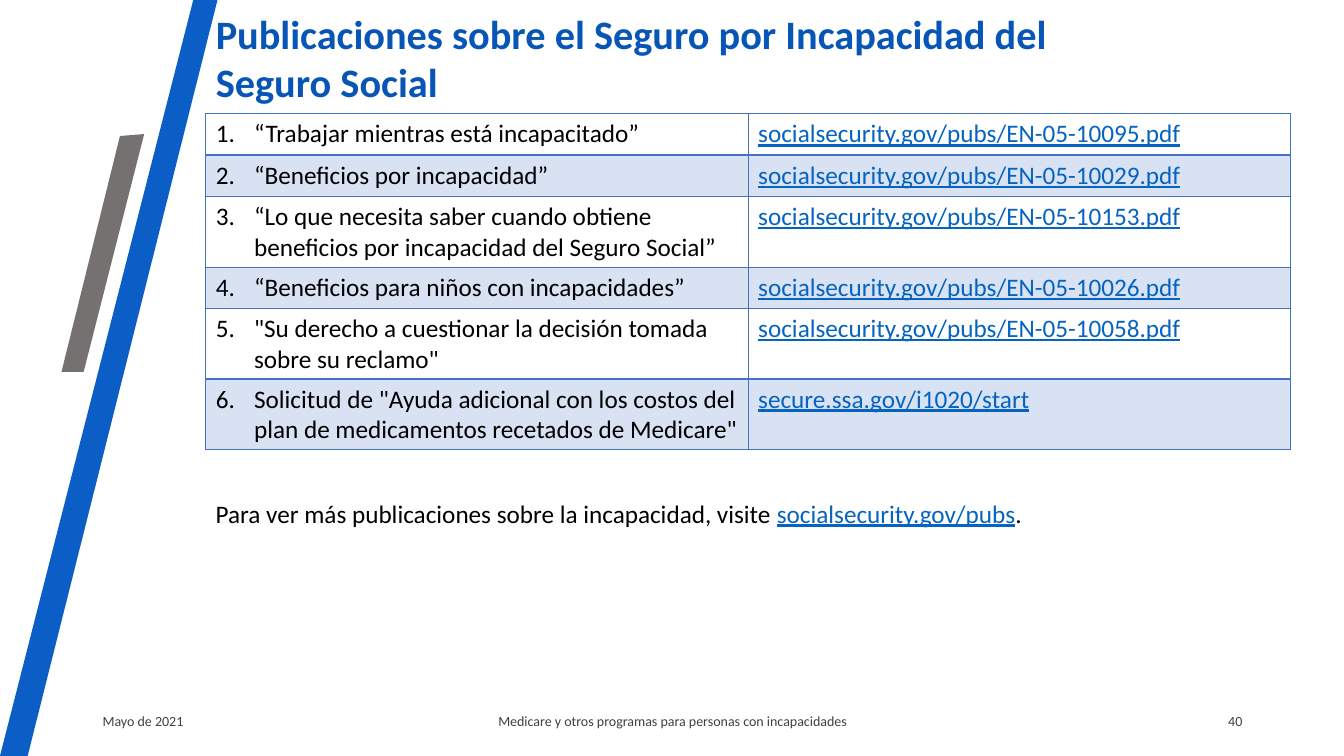
from dataclasses import dataclass

from lxml import etree
from pptx import Presentation
from pptx.dml.color import RGBColor
from pptx.enum.text import MSO_ANCHOR, PP_ALIGN
from pptx.oxml.ns import qn
from pptx.util import Inches, Pt

LEFT, CENTER, RIGHT = PP_ALIGN.LEFT, PP_ALIGN.CENTER, PP_ALIGN.RIGHT
MIDDLE = MSO_ANCHOR.MIDDLE
FONT = "Calibri"
COLORS = {
    "title": "0755B7",
    "stripe": "0A5EC6",
    "accent": "767171",
    "text": "000000",
    "link": "0563C1",
    "footer": "404040",
    "table": "4472C4",
}
CONTENT_LEFT, CONTENT_WIDTH = 2.04, 10.76
ROW_HEIGHT = 0.41
NUMBER_INDENT = 0.38


@dataclass
class Publication:
    title: str
    address: str


@dataclass
class Band:
    color: str
    corners: list[tuple[float, float]]


@dataclass
class FooterItem:
    text: str
    left: float
    width: float
    align: PP_ALIGN


PUBLICATIONS = [
    Publication("“Trabajar mientras está incapacitado”",
                "socialsecurity.gov/pubs/EN-05-10095.pdf"),
    Publication("“Beneficios por incapacidad”",
                "socialsecurity.gov/pubs/EN-05-10029.pdf"),
    Publication("“Lo que necesita saber cuando obtiene beneficios por "
                "incapacidad del Seguro Social”",
                "socialsecurity.gov/pubs/EN-05-10153.pdf"),
    Publication("“Beneficios para niños con incapacidades”",
                "socialsecurity.gov/pubs/EN-05-10026.pdf"),
    Publication('"Su derecho a cuestionar la decisión tomada sobre su reclamo"',
                "socialsecurity.gov/pubs/EN-05-10058.pdf"),
    Publication('Solicitud de "Ayuda adicional con los costos del plan de '
                'medicamentos recetados de Medicare"',
                "secure.ssa.gov/i1020/start"),
]
BANDS = [
    Band("stripe", [(1.92, -0.01), (2.16, -0.01), (0.27, 7.52), (0, 7.5)]),
    Band("accent", [(1.19, 1.35), (1.43, 1.33), (0.83, 3.69), (0.61, 3.69)]),
]
FOOTER = [
    FooterItem("Mayo de 2021", 0.92, 3, LEFT),
    FooterItem("Medicare y otros programas para personas con incapacidades",
               4.42, 4.5, CENTER),
    FooterItem("40", 9.42, 3, RIGHT),
]


def rgb(name: str) -> RGBColor:
    return RGBColor.from_string(COLORS[name])


def style_font(font, size: float, color: str) -> None:
    font.name = FONT
    font.size = Pt(size)
    font.color.rgb = rgb(color)


def add_band(slide, band: Band) -> None:
    start, *others = [(Inches(x), Inches(y)) for x, y in band.corners]
    builder = slide.shapes.build_freeform(*start)
    builder.add_line_segments(others, close=True)
    shape = builder.convert_to_shape()
    shape.shadow.inherit = False
    shape.fill.solid()
    shape.fill.fore_color.rgb = rgb(band.color)
    shape.line.fill.background()


def add_text_frame(slide, left: float, top: float, width: float, height: float):
    box = slide.shapes.add_textbox(
        Inches(left), Inches(top), Inches(width), Inches(height))
    box.text_frame.word_wrap = True
    return box.text_frame


def add_footer_item(slide, item: FooterItem) -> None:
    frame = add_text_frame(slide, item.left, 6.95, item.width, 0.4)
    frame.vertical_anchor = MIDDLE
    paragraph = frame.paragraphs[0]
    paragraph.text = item.text
    paragraph.alignment = item.align
    style_font(paragraph.font, 10, item.color if hasattr(item, "color") else "footer")


def add_title(slide) -> None:
    title = slide.shapes.title
    title.left, title.top = Inches(CONTENT_LEFT), Inches(0.01)
    title.width, title.height = Inches(CONTENT_WIDTH), Inches(1.12)
    frame = title.text_frame
    frame.vertical_anchor = MIDDLE
    frame.text = "Publicaciones sobre el Seguro por Incapacidad del \vSeguro Social"
    paragraph = frame.paragraphs[0]
    paragraph.alignment = LEFT
    style_font(paragraph.font, 28.8, "title")
    paragraph.font.bold = True


def set_borders(cell, widths: dict[str, float]) -> None:
    """Draw the cell sides, keyed L, R, T and B, with widths in points."""
    properties = cell._tc.get_or_add_tcPr()
    for side, width in widths.items():
        line = etree.SubElement(properties, qn(f"a:ln{side}"), w=str(Pt(width)))
        fill = etree.SubElement(line, qn("a:solidFill"))
        etree.SubElement(fill, qn("a:srgbClr"), val=COLORS["table"])


def fill_cell(cell, shaded: bool) -> None:
    """Tint shaded cells with the table colour at 20 % opacity."""
    if not shaded:
        cell.fill.background()
        return
    cell.fill.solid()
    cell.fill.fore_color.rgb = rgb("table")
    color = next(cell._tc.tcPr.iterchildren(qn("a:solidFill")))[0]
    etree.SubElement(color, qn("a:alpha"), val="20000")


def number_paragraph(paragraph, number: int) -> None:
    properties = paragraph._p.get_or_add_pPr()
    properties.set("marL", str(Inches(NUMBER_INDENT)))
    properties.set("indent", str(-Inches(NUMBER_INDENT)))
    bullet = etree.Element(
        qn("a:buAutoNum"), type="arabicPeriod", startAt=str(number))
    properties.insert(0, bullet)


def add_publications(slide) -> None:
    table = slide.shapes.add_table(
        len(PUBLICATIONS), 2, Inches(CONTENT_LEFT), Inches(1.13),
        Inches(CONTENT_WIDTH), Inches(ROW_HEIGHT * len(PUBLICATIONS))).table
    table.first_row = table.horz_banding = False
    for row, publication in enumerate(PUBLICATIONS):
        borders = {"L": 1, "R": 1, "T": 2 if row == 1 else 1, "B": 2 if row == 0 else 1}
        title_cell, address_cell = table.cell(row, 0), table.cell(row, 1)
        for cell, text, color in ((title_cell, publication.title, "text"),
                                  (address_cell, publication.address, "link")):
            set_borders(cell, borders)
            fill_cell(cell, shaded=row % 2 == 1)
            paragraph = cell.text_frame.paragraphs[0]
            paragraph.text = text
            style_font(paragraph.font, 18, color)
        number_paragraph(title_cell.text_frame.paragraphs[0], row + 1)
        address_cell.text_frame.paragraphs[0].font.underline = True


def add_more_information(slide) -> None:
    paragraph = add_text_frame(slide, CONTENT_LEFT, 4.89, 8.62, 0.66).paragraphs[0]
    paragraph.space_before = Pt(6)
    style_font(paragraph.font, 18, "text")
    paragraph.add_run().text = "Para ver más publicaciones sobre la incapacidad, visite "
    link = paragraph.add_run()
    link.text = "socialsecurity.gov/pubs"
    link.font.color.rgb = rgb("link")
    link.font.underline = True
    paragraph.add_run().text = "."


def main() -> None:
    presentation = Presentation()
    presentation.slide_width, presentation.slide_height = Inches(13.33), Inches(7.5)
    slide = presentation.slides.add_slide(presentation.slide_layouts[5])
    for band in BANDS:
        add_band(slide, band)
    for item in FOOTER:
        add_footer_item(slide, item)
    add_more_information(slide)
    add_publications(slide)
    add_title(slide)
    presentation.save("out.pptx")


if __name__ == "__main__":
    main()
